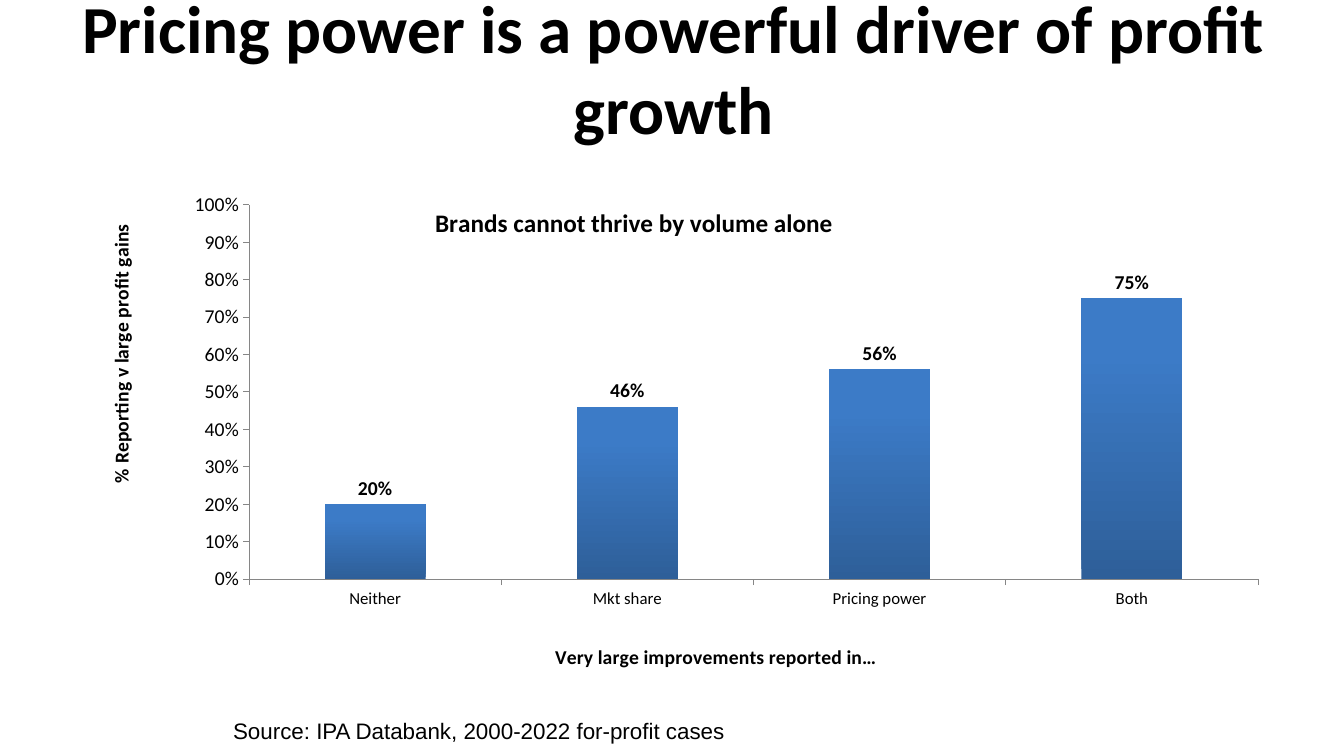
from dataclasses import dataclass

from lxml import etree
from pptx import Presentation
from pptx import util as u
from pptx.chart.data import CategoryChartData
from pptx.dml.color import RGBColor
from pptx.enum import chart as charts, text
from pptx.oxml.ns import qn

HEADING = "Pricing power is a powerful driver of profit growth"
SOURCE = "Source: IPA Databank, 2000-2022 for-profit cases"
CHART_TITLE = "Brands cannot thrive by volume alone"
CATEGORY_TITLE = "Very large improvements reported in…"
VALUE_TITLE = "% Reporting v large profit gains"
PROFIT_GAINS = {"Neither": 0.2, "Mkt share": 0.46, "Pricing power": 0.56, "Both": 0.75}

HEADING_BOX = (0.68, 0.04, 12, 1.25)
CHART_BOX = (0.67, 1.75, 12, 4.95)
SOURCE_BOX = (2.02, 7.07, 5.46, 0.37)
PLOT_AREA = {"x": 0.15, "y": 0.057, "w": 0.834, "h": 0.752}


@dataclass(frozen=True)
class Theme:
    ink: RGBColor = RGBColor(0, 0, 0)
    axis: RGBColor = RGBColor(0x86, 0x86, 0x86)
    bar_bottom: RGBColor = RGBColor(0x2E, 0x5F, 0x99)
    bar_top: RGBColor = RGBColor(0x3C, 0x7B, 0xC7)
    font: str = "Calibri"
    source_font: str = "Arial"
    heading_size: int = 48
    chart_title_size: int = 18
    source_size: int = 16
    label_size: int = 14
    category_size: int = 12


THEME = Theme()


def inches(box):
    return [u.Inches(length) for length in box]


def style(font, size, bold=False, name=THEME.font):
    font.name = name
    font.size = u.Pt(size)
    font.bold = bold
    font.color.rgb = THEME.ink


def write(frame, words, size, bold=False, name=THEME.font):
    frame.text = words
    paragraph = frame.paragraphs[0]
    paragraph.alignment = text.PP_ALIGN.CENTER
    style(paragraph.font, size, bold, name)


def make_layout(settings):
    layout = etree.Element(qn("c:layout"))
    manual = etree.SubElement(layout, qn("c:manualLayout"))
    for tag, value in settings.items():
        etree.SubElement(manual, qn(f"c:{tag}")).set("val", str(value))
    return layout


def drop_layout(element):
    old = element.find(qn("c:layout"))
    if old is not None:
        element.remove(old)


def place_title(title, words, size, x, y):
    write(title.text_frame, words, size, True)
    element = title._element
    drop_layout(element)
    layout = make_layout({"xMode": "edge", "yMode": "edge", "x": x, "y": y})
    element.find(qn("c:tx")).addnext(layout)
    overlay = element.find(qn("c:overlay"))
    if overlay is None:
        overlay = etree.Element(qn("c:overlay"))
        layout.addnext(overlay)
    overlay.set("val", "1")


def style_axis(axis, size):
    axis.has_major_gridlines = False
    axis.major_tick_mark = charts.XL_TICK_MARK.OUTSIDE
    axis.minor_tick_mark = charts.XL_TICK_MARK.NONE
    axis.format.line.color.rgb = THEME.axis
    axis.format.line.width = u.Pt(0.75)
    style(axis.tick_labels.font, size)


def add_profit_chart(slide):
    data = CategoryChartData(number_format="0%")
    data.categories = list(PROFIT_GAINS)
    data.add_series("Series 1", list(PROFIT_GAINS.values()))
    chart = slide.shapes.add_chart(
        charts.XL_CHART_TYPE.COLUMN_CLUSTERED, *inches(CHART_BOX), data
    ).chart
    style(chart.font, THEME.label_size)
    chart.has_legend = False
    chart.has_title = True
    place_title(chart.chart_title, CHART_TITLE, THEME.chart_title_size, 0.3, 0.05)

    category_axis, value_axis = chart.category_axis, chart.value_axis
    style_axis(category_axis, THEME.category_size)
    style_axis(value_axis, THEME.label_size)
    value_axis.minimum_scale = 0
    value_axis.maximum_scale = 1
    value_axis.major_unit = 0.1
    value_axis.tick_labels.number_format = "0%"
    value_axis.tick_labels.number_format_is_linked = False
    place_title(category_axis.axis_title, CATEGORY_TITLE, THEME.label_size, 0.4, 0.93)
    place_title(value_axis.axis_title, VALUE_TITLE, THEME.label_size, 0.03, 0.09)
    body = value_axis.axis_title.text_frame._txBody.find(qn("a:bodyPr"))
    body.set("rot", "-5400000")
    body.set("vert", "horz")

    plot = chart.plots[0]
    plot.gap_width = 150
    plot.vary_by_categories = False
    fill = plot.series[0].format.fill
    fill.gradient()
    fill.gradient_angle = 90
    bottom, top = fill.gradient_stops
    bottom.color.rgb, top.color.rgb = THEME.bar_bottom, THEME.bar_top
    top.position = 0.8

    plot.has_data_labels = True
    labels = plot.data_labels
    labels.show_value = True
    labels.number_format = "0%"
    labels.number_format_is_linked = False
    labels.position = charts.XL_LABEL_POSITION.OUTSIDE_END
    style(labels.font, THEME.label_size, True)

    area = chart._chartSpace.find(f".//{qn('c:plotArea')}")
    drop_layout(area)
    modes = {"layoutTarget": "inner", "xMode": "edge", "yMode": "edge"}
    area.insert(0, make_layout({**modes, **PLOT_AREA}))


def main():
    presentation = Presentation()
    presentation.slide_width = u.Inches(13.33)
    presentation.slide_height = u.Inches(7.5)
    slide = presentation.slides.add_slide(presentation.slide_layouts[5])

    heading = slide.shapes.title
    heading.left, heading.top, heading.width, heading.height = inches(HEADING_BOX)
    write(heading.text_frame, HEADING, THEME.heading_size, True)
    heading.text_frame.auto_size = text.MSO_AUTO_SIZE.NONE
    heading.text_frame.vertical_anchor = text.MSO_ANCHOR.MIDDLE

    add_profit_chart(slide)

    source = slide.shapes.add_textbox(*inches(SOURCE_BOX)).text_frame
    source.word_wrap = True
    source.auto_size = text.MSO_AUTO_SIZE.SHAPE_TO_FIT_TEXT
    write(source, SOURCE, THEME.source_size, name=THEME.source_font)

    presentation.save("out.pptx")


if __name__ == "__main__":
    main()
